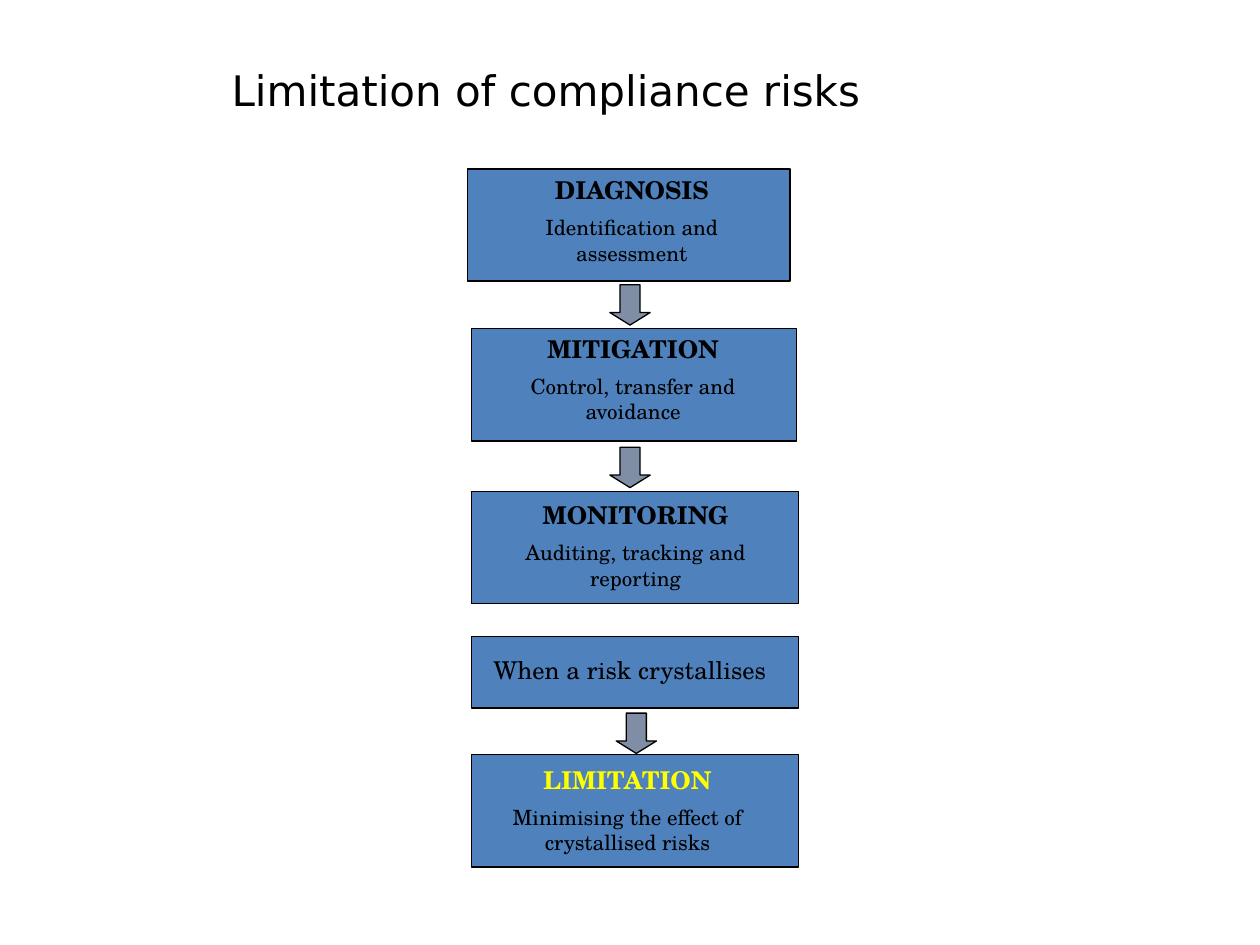
from pptx import Presentation
from pptx.dml.color import RGBColor
from pptx.enum.shapes import MSO_SHAPE
from pptx.enum.text import MSO_ANCHOR, PP_ALIGN
from pptx.util import Inches, Pt

COLORS = {"box": "4F81BD", "arrow": "7F8EA5", "ink": "000000", "accent": "FFFF00"}
SERIF = "TeX Gyre Schola"
TITLE = {"name": "DejaVu Sans", "size": Pt(24)}
HEADING = {"name": SERIF, "size": Pt(14), "bold": True}
EVENT = {"name": SERIF, "size": Pt(14)}
BODY = {"name": SERIF, "size": Pt(12)}
ARROW_SIZE = 0.32

STAGES = [
    ((3.71, 1.34, 2.56, 0.89), (0.19, 0, 2.23),
     [("DIAGNOSIS", HEADING, "ink"), ("Identification and assessment", BODY, "ink")]),
    ((3.74, 2.61, 2.58, 0.89), (0.17, -0.01, 2.23),
     [("MITIGATION", HEADING, "ink"), ("Control, transfer and avoidance", BODY, "ink")]),
    ((3.74, 3.9, 2.6, 0.89), (-0.01, 0.02, 2.63),
     [("MONITORING", HEADING, "ink"), ("Auditing, tracking and reporting", BODY, "ink")]),
    ((3.74, 5.05, 2.6, 0.57), (-0.04, 0.1, 2.6),
     [("When a risk crystallises", EVENT, "ink")]),
    ((3.74, 5.99, 2.6, 0.89), (-0.1, 0.03, 2.68),
     [("LIMITATION", HEADING, "accent"),
      ("Minimising the effect of crystallised risks", BODY, "ink")]),
]
ARROWS = [(4.84, 2.26), (4.84, 3.55), (4.89, 5.66)]


def add_block(s, kind, box, fill):
    sp = s.shapes.add_shape(kind, *map(Inches, box))
    sp.shadow.inherit = False
    sp.fill.solid()
    sp.fill.fore_color.rgb = RGBColor.from_string(COLORS[fill])
    sp.line.color.rgb = RGBColor.from_string(COLORS["ink"])
    sp.line.width = Pt(0.75)
    return sp


def add_text(s, box, lines, align=PP_ALIGN.CENTER, anchor=MSO_ANCHOR.TOP):
    tf = s.shapes.add_textbox(*map(Inches, box)).text_frame
    tf.word_wrap = True
    tf.vertical_anchor = anchor
    for i, (text, style, color) in enumerate(lines):
        p = tf.add_paragraph() if i else tf.paragraphs[0]
        p.alignment = align
        p.space_before = Pt(6 if i else 0)
        r = p.add_run()
        r.text = text
        for name, value in style.items():
            setattr(r.font, name, value)
        r.font.color.rgb = RGBColor.from_string(COLORS[color])


def add_title(s, box):
    add_text(s, box, [("Limitation of compliance risks", TITLE, "ink")],
             PP_ALIGN.LEFT, MSO_ANCHOR.MIDDLE)


def add_stage(s, box, text_area, lines):
    left, top, _, height = box
    dx, dy, width = text_area
    add_block(s, MSO_SHAPE.RECTANGLE, box, "box")
    add_text(s, (left + dx, top + dy, width, height - dy), lines)


def add_arrow(s, left, top):
    sp = add_block(s, MSO_SHAPE.DOWN_ARROW, (left, top, ARROW_SIZE, ARROW_SIZE), "arrow")
    sp.adjustments[0] = 0.5
    sp.adjustments[1] = 0.31


def main():
    prs = Presentation()
    prs.slide_width, prs.slide_height = Inches(10), Inches(7.5)
    s = prs.slides.add_slide(prs.slide_layouts[6])
    add_title(s, (1.74, 0.36, 7.86, 0.71))
    for stage in STAGES:
        add_stage(s, *stage)
    for position in ARROWS:
        add_arrow(s, *position)
    prs.save("out.pptx")


if __name__ == "__main__":
    main()
